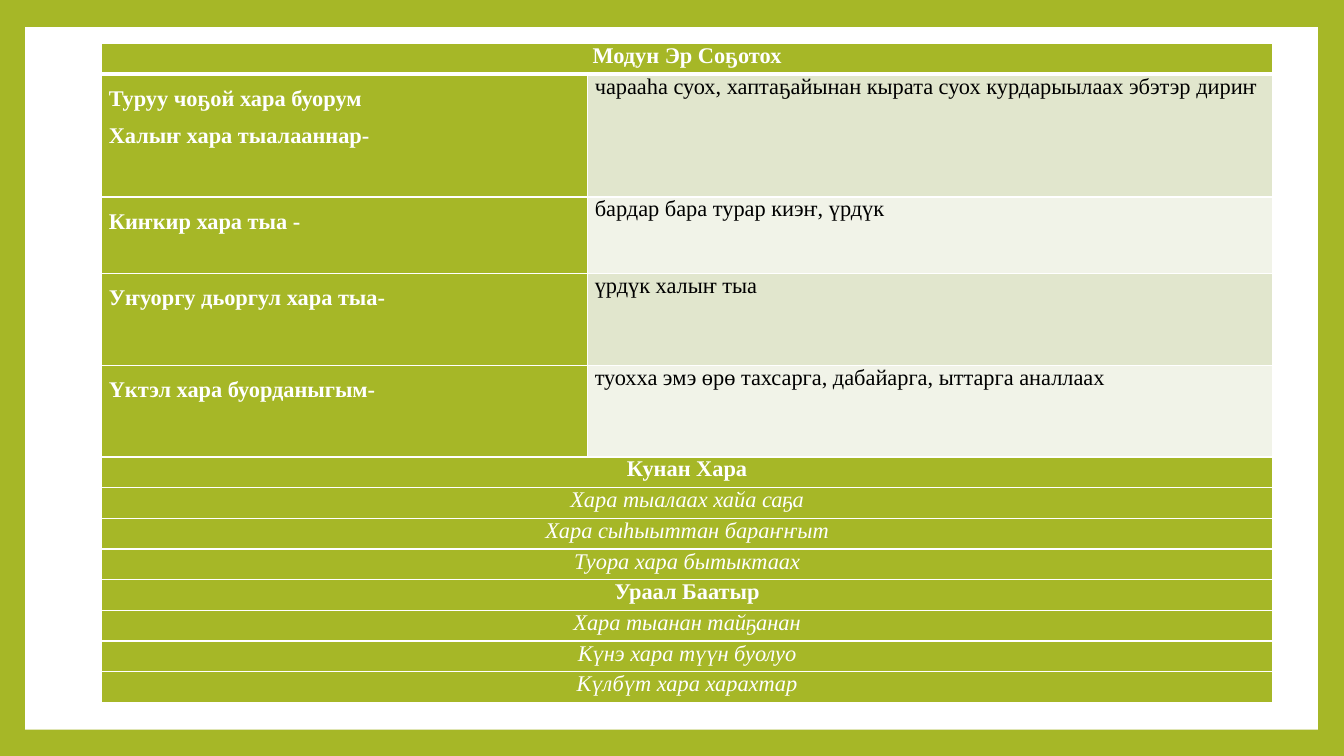
from lxml import etree
from pptx import Presentation
from pptx.dml.color import RGBColor
from pptx.enum.shapes import MSO_SHAPE
from pptx.enum.text import PP_ALIGN
from pptx.oxml.ns import qn
from pptx.util import Inches, Pt

RECTANGLE = MSO_SHAPE.RECTANGLE
CENTER, JUSTIFY = PP_ALIGN.CENTER, PP_ALIGN.JUSTIFY

COLORS = {
    "green": "A6B727",
    "white": "FFFFFF",
    "black": "000000",
    "band_dark": "E1E6CD",
    "band_light": "F1F3E8",
}
FONT = "Times New Roman"

FIRST_HERO = "Модун Эр Соҕотох"
# phrase lines, explanation, row height in inches
EXPLAINED_PHRASES = [
    (["Туруу чоҕой хара буорум", "Халыҥ хара тыалааннар-"],
     "чарааһа суох, хаптаҕайынан кырата суох курдарыылаах эбэтэр дириҥ", 1.22),
    (["Киҥкир хара тыа -"], "бардар бара турар киэҥ, үрдүк", 0.76),
    (["Уҥуоргу дьоргул хара тыа-"], "үрдүк халыҥ тыа", 0.91),
    (["Үктэл хара буорданыгым-"],
     "туохха эмэ өрө тахсарга, дабайарга, ыттарга аналлаах", 0.91),
]
OTHER_HEROES = [
    ("Кунан Хара",
     ["Хара тыалаах хайа саҕа", "Хара сыһыыттан бараҥҥыт", "Туора хара бытыктаах"]),
    ("Ураал Баатыр",
     ["Хара тыанан тайҕанан", "Күнэ хара түүн буолуо", "Күлбүт хара харахтар"]),
]

PANEL = (0.25, 0.27, 12.82, 6.97)
TABLE = (1.01, 0.43, 11.61, 6.54)
COLUMN_WIDTHS = (4.82, 6.79)


def rgb(name):
    return RGBColor.from_string(COLORS[name])


def set_borders(cell, top=1, bottom=1):
    properties = cell._tc.get_or_add_tcPr()
    sides = (("a:lnL", 1), ("a:lnR", 1), ("a:lnT", top), ("a:lnB", bottom))
    for position, (tag, width) in enumerate(sides):
        line = etree.Element(qn(tag), w=str(Pt(width)))
        fill = etree.SubElement(line, qn("a:solidFill"))
        etree.SubElement(fill, qn("a:srgbClr"), val=COLORS["white"])
        properties.insert(position, line)


def write(cell, lines, fill="green", color="white", bold=False, italic=False,
          align=CENTER, spacing=None):
    cell.fill.solid()
    cell.fill.fore_color.rgb = rgb(fill)
    cell.margin_left = cell.margin_right = Inches(0.07)
    cell.margin_top = cell.margin_bottom = 0
    frame = cell.text_frame
    for index, line in enumerate(lines):
        paragraph = frame.add_paragraph() if index else frame.paragraphs[0]
        paragraph.alignment = align
        if spacing:
            paragraph.line_spacing = spacing
        run = paragraph.add_run()
        run.text = line
        font = run.font
        font.name, font.size = FONT, Pt(16)
        font.bold, font.italic = bold, italic
        font.color.rgb = rgb(color)


def write_full_row(table, row, text, **style):
    table.cell(row, 0).merge(table.cell(row, 1))
    write(table.cell(row, 0), [text], **style)


def main():
    prs = Presentation()
    prs.slide_width, prs.slide_height = Inches(13.33), Inches(7.5)
    slide = prs.slides.add_slide(prs.slide_layouts[6])
    slide.background.fill.solid()
    slide.background.fill.fore_color.rgb = rgb("green")

    panel = slide.shapes.add_shape(RECTANGLE, *map(Inches, PANEL))
    panel.shadow.inherit = False
    panel.fill.solid()
    panel.fill.fore_color.rgb = rgb("white")
    panel.line.fill.background()

    full_rows = [(FIRST_HERO, {"bold": True})]
    for hero, verses in OTHER_HEROES:
        full_rows.append((hero, {"bold": True}))
        full_rows += [(verse, {"italic": True}) for verse in verses]

    phrase_heights = [height for _, _, height in EXPLAINED_PHRASES]
    full_height = (TABLE[3] - sum(phrase_heights)) / len(full_rows)
    heights = ([full_height] + phrase_heights
               + [full_height] * (len(full_rows) - 1))

    table = slide.shapes.add_table(len(heights), 2, *map(Inches, TABLE)).table
    for column, width in zip(table.columns, COLUMN_WIDTHS):
        column.width = Inches(width)
    for row, height in zip(table.rows, heights):
        row.height = Inches(height)

    for row, (phrase, meaning, _) in enumerate(EXPLAINED_PHRASES, start=1):
        write(table.cell(row, 0), phrase, bold=True, align=JUSTIFY, spacing=1.5)
        write(table.cell(row, 1), [meaning], color="black", align=JUSTIFY,
              fill="band_dark" if row % 2 else "band_light")

    for index, (text, style) in enumerate(full_rows):
        row = index + len(EXPLAINED_PHRASES) if index else 0
        write_full_row(table, row, text, **style)

    for row in range(len(heights)):
        for column in range(2):
            set_borders(table.cell(row, column),
                        top=3 if row == 1 else 1, bottom=3 if row == 0 else 1)

    prs.save("out.pptx")


if __name__ == "__main__":
    main()
